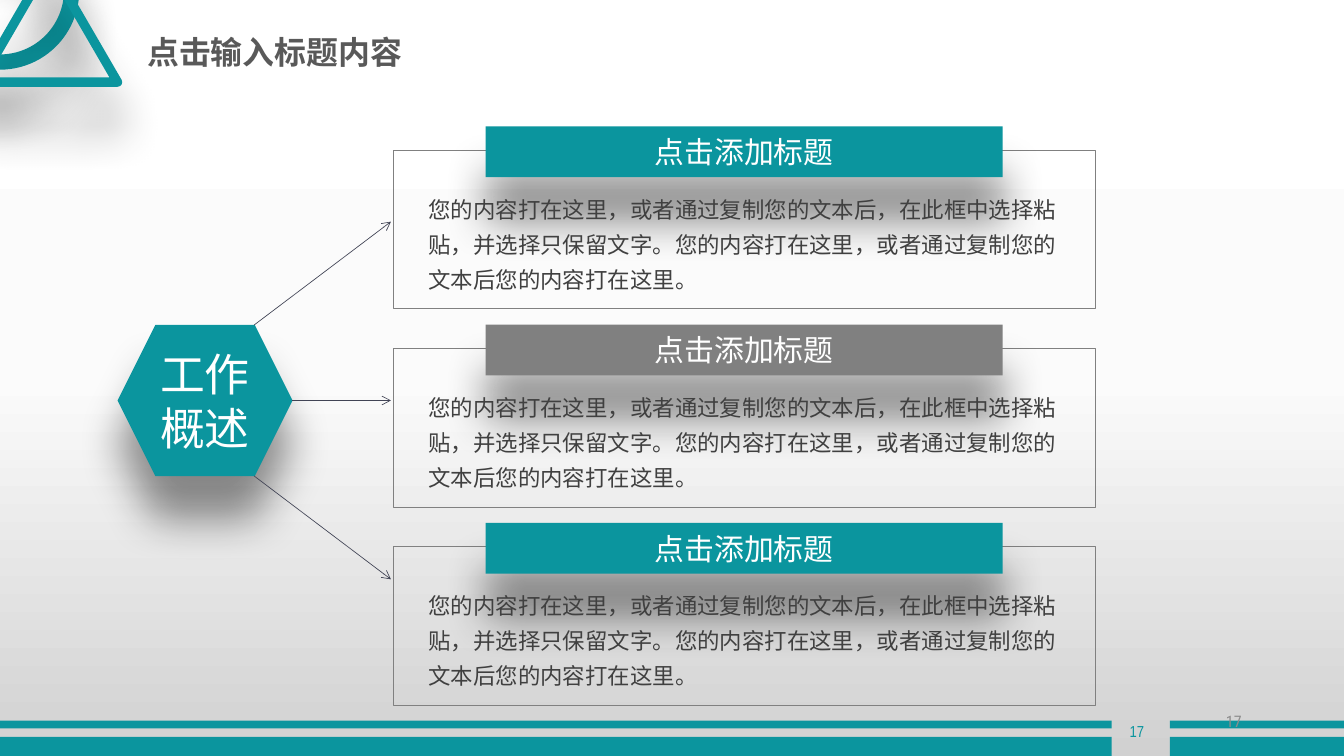
"""Build the work overview slide: one hexagon pointing to three titled text frames."""
import pptx
import pptx.dml.color
import pptx.enum.shapes
import pptx.enum.text
import pptx.oxml
import pptx.oxml.ns
import pptx.util
from lxml import etree

Pt = pptx.util.Pt
qn = pptx.oxml.ns.qn
Kind = pptx.enum.shapes.MSO_SHAPE
Align = pptx.enum.text.PP_ALIGN
Anchor = pptx.enum.text.MSO_ANCHOR

TEAL, GRAY, WHITE = "0B959E", "808080", "FFFFFF"
CJK = "Noto Sans CJK SC"
HEAD = "点击添加标题"
BODY = ("您的内容打在这里，或者通过复制您的文本后，在此框中选择粘贴，"
        "并选择只保留文字。您的内容打在这里，或者通过复制您的文本后您的内容打在这里。")


def paint(fill, color):
    fill.solid()
    fill.fore_color.rgb = pptx.dml.color.RGBColor.from_string(color)


def write(shape, text, color, font, para=None, frame=None):
    box = shape.text_frame
    line = box.paragraphs[0]
    run = line.add_run()
    run.text = text
    paint(run.font.fill, color)
    for item, values in ((box, {"word_wrap": True, **(frame or {})}),
                         (line, para or {}), (run.font, font)):
        for name, value in values.items():
            setattr(item, name, value)
    etree.SubElement(run.font._element, qn("a:ea"), typeface=font["name"])


deck = pptx.Presentation()
deck.slide_width, deck.slide_height = Pt(1012.5), Pt(569.5)
slide = deck.slides.add_slide(deck.slide_layouts[5])
shapes = slide.shapes

back = slide.background.fill
back.gradient()
back.gradient_angle = 270
stops = slide._element.find(".//" + qn("a:gsLst"))
for stop in list(stops):
    stops.remove(stop)
for place, color in ((0, WHITE), (50, "FBFBFB"), (100, "D1D1D1")):
    stop = etree.SubElement(stops, qn("a:gs"), pos=str(place * 1000))
    etree.SubElement(stop, qn("a:srgbClr"), val=color)

inset = {"margin_left": Pt(8.1), "margin_right": Pt(8.1),
         "margin_top": Pt(4.05), "margin_bottom": Pt(4.05)}
middle = {"vertical_anchor": Anchor.MIDDLE}
center = {"alignment": Align.CENTER}
label = {"name": CJK, "size": Pt(22.5)}

# kind, box, fill, line, line width, shadow, text, text size
parts = [
    (Kind.DONUT, (-59.8, -67, 119.5, 119.5), TEAL, None, 0, True, "", 0),
    (Kind.ISOSCELES_TRIANGLE, (-15.1, -27.4, 103.7, 89.3), None, TEAL, 7, True, "", 0),
]
for left, width in ((0, 837.4), (881.3, 131.2)):
    for top, height in ((555.1, 14.4), (542.9, 5.8)):
        parts.append((Kind.RECTANGLE, (left, top, width, height), TEAL, None, 0, False, "", 0))
parts.append((Kind.HEXAGON, (88.6, 244.8, 131.8, 113.8), TEAL, None, 0, True, "工作概述", 33.8))
rows = [149.4 * row for row in range(3)]
for down, color in zip(rows, (TEAL, GRAY, TEAL)):
    parts.append((Kind.RECTANGLE, (296.6, 113 + down, 528.5, 119.5), None, GRAY, 0.25, False, "", 0))
    parts.append((Kind.RECTANGLE, (365.8, 95.2 + down, 389.5, 38.2), color, None, 0, True, HEAD, 22.5))

for kind, box, fill, line, width, shade, text, size in parts:
    shape = shapes.add_shape(kind, *map(Pt, box))
    shape.shadow.inherit = False
    if kind == Kind.DONUT:
        shape.adjustments[0] = 0.096
    if fill:
        paint(shape.fill, fill)
    else:
        shape.fill.background()
    if line:
        paint(shape.line.fill, line)
        shape.line.width = Pt(width)
    else:
        shape.line.fill.background()
    if shade:
        glow = etree.SubElement(
            shape._element.spPr.find(qn("a:effectLst")), qn("a:outerShdw"),
            blurRad=str(Pt(33)), dist=str(Pt(33)), dir="5400000", algn="t", rotWithShape="0")
        tint = etree.SubElement(glow, qn("a:srgbClr"), val="000000")
        etree.SubElement(tint, qn("a:alpha"), val="43000")
    if text:
        write(shape, text, WHITE, {**label, "size": Pt(size)}, center, {**middle, **inset})

for ends in ((191.5, 244.8, 294.5, 167), (220.3, 301.7, 294.5, 301.7),
             (191.5, 358.6, 294.5, 436.4)):
    arrow = shapes.add_connector(pptx.enum.shapes.MSO_CONNECTOR.STRAIGHT, *map(Pt, ends))
    paint(arrow.line.fill, "414455")
    arrow.line.width = Pt(0.5)
    etree.SubElement(arrow.line._get_or_add_ln(), qn("a:tailEnd"), type="arrow")
    etree.SubElement(arrow._element.spPr, qn("a:effectLst"))

for down in rows:
    note = shapes.add_textbox(*map(Pt, (314.6, 137.4 + down, 502.6, 87.1)))
    write(note, BODY, "404040", {"name": CJK, "size": Pt(16.9)}, {"line_spacing": 1.3}, inset)

for box, color, font, side in (
        ((838.1, 533.5, 36.7, 34.6), TEAL, "Arial Narrow", Align.CENTER),
        ((715, 527.8, 227.5, 30.2), "8C8C8C", "Roboto Condensed", Align.RIGHT)):
    page = shapes.add_textbox(*map(Pt, box))
    write(page, "17", color, {"name": font, "size": Pt(12)}, {"alignment": side}, middle)

title = shapes.title
for name, value in zip(("left", "top", "width", "height"), (103.7, 25.2, 277.9, 32.4)):
    setattr(title, name, Pt(value))
write(title, "点击输入标题内容", "595959", {"name": CJK, "size": Pt(24), "bold": True},
      {"alignment": Align.LEFT, "line_spacing": 0.8, "space_before": Pt(10)},
      {**middle, "auto_size": pptx.enum.text.MSO_AUTO_SIZE.NONE})

deck.save("out.pptx")
